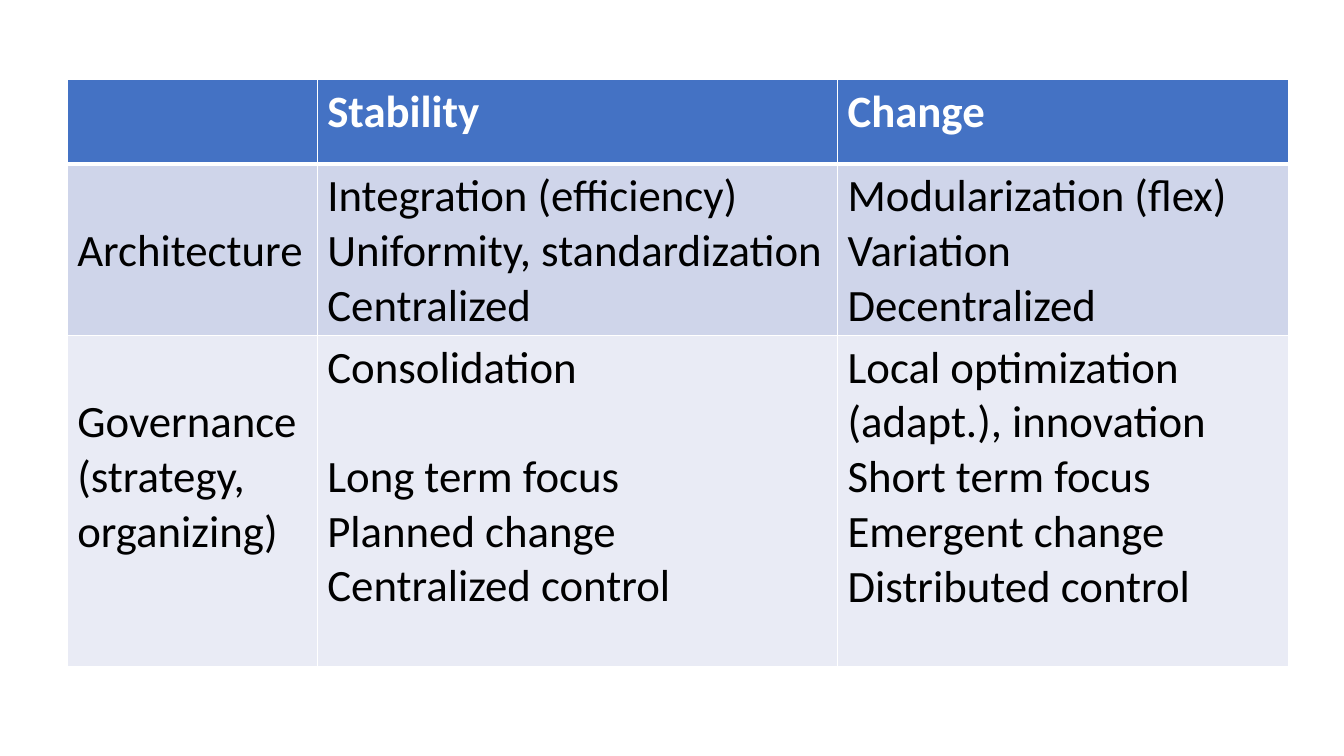
import pptx
import pptx.dml.color
import pptx.oxml
import pptx.oxml.ns
import pptx.util
from lxml import etree

COLORS = {"header": "4472C4", "band": "CFD5EA", "light": "E9EBF5",
          "white": "FFFFFF", "black": "000000"}
COLUMN_WIDTHS = [2.48, 5.16, 4.47]
ROW_HEIGHTS = [0.84, 1.7, 3.29]
ROW_FILLS = ["header", "band", "light"]
LINE_HEIGHT = 0.54  # one line of 32 pt text, in inches

# Each cell is a list of paragraphs
CONTENT = [
    [[], ["Stability"], ["Change"]],
    [["Architecture"],
     ["Integration (efficiency)", "Uniformity, standardization", "Centralized"],
     ["Modularization (flex)", "Variation", "Decentralized"]],
    [["Governance (strategy, organizing)"],
     ["Consolidation", "Long term focus", "Planned change", "Centralized control"],
     ["Local optimization (adapt.), innovation", "Short term focus",
      "Emergent change", "Distributed control"]],
]


def write_line(para, text, size=32, color="black", bold=False, after=0):
    para.space_after = pptx.util.Pt(after)
    span = para.add_run()
    span.text = text
    span.font.name = "Calibri"
    span.font.size = pptx.util.Pt(size)
    span.font.bold = bold
    span.font.color.rgb = pptx.dml.color.RGBColor.from_string(COLORS[color])


def set_borders(cell, **widths):
    properties = cell._tc.get_or_add_tcPr()
    for position, (side, width) in enumerate(widths.items()):
        line = etree.Element(pptx.oxml.ns.qn("a:ln" + side), w=str(pptx.util.Pt(width)))
        fill = etree.SubElement(line, pptx.oxml.ns.qn("a:solidFill"))
        etree.SubElement(fill, pptx.oxml.ns.qn("a:srgbClr"), val=COLORS["white"])
        properties.insert(position, line)


# Slide
deck = pptx.Presentation()
deck.slide_width = pptx.util.Inches(13.33)
deck.slide_height = pptx.util.Inches(7.5)
page = deck.slides.add_slide(deck.slide_layouts[6])

# Table grid
frame = page.shapes.add_table(
    len(ROW_HEIGHTS), len(COLUMN_WIDTHS),
    int(deck.slide_width * 0.05), int(deck.slide_height * 0.105),
    pptx.util.Inches(sum(COLUMN_WIDTHS)), pptx.util.Inches(sum(ROW_HEIGHTS)))
table = frame.table
for column, width in zip(table.columns, COLUMN_WIDTHS):
    column.width = pptx.util.Inches(width)
for row, height in zip(table.rows, ROW_HEIGHTS):
    row.height = pptx.util.Inches(height)

# Cells
for row_index, row_content in enumerate(CONTENT):
    is_header = row_index == 0
    for column_index, lines in enumerate(row_content):
        cell = table.cell(row_index, column_index)
        cell.fill.solid()
        cell.fill.fore_color.rgb = pptx.dml.color.RGBColor.from_string(
            COLORS[ROW_FILLS[row_index]])
        # Row labels start one line below the top of their row
        is_label = column_index == 0 and not is_header
        cell.margin_top = pptx.util.Inches(0.05 + LINE_HEIGHT * is_label)
        cell.margin_bottom = pptx.util.Inches(0.01)
        set_borders(cell, L=1, R=1, T=3 if row_index == 1 else 1, B=3 if is_header else 1)
        for line_index, text in enumerate(lines):
            frame_text = cell.text_frame
            para = frame_text.add_paragraph() if line_index else frame_text.paragraphs[0]
            # One free line keeps the two columns level
            write_line(para, text, color="white" if is_header else "black", bold=is_header,
                       after=39 if text == "Consolidation" else 0)

deck.save("out.pptx")
